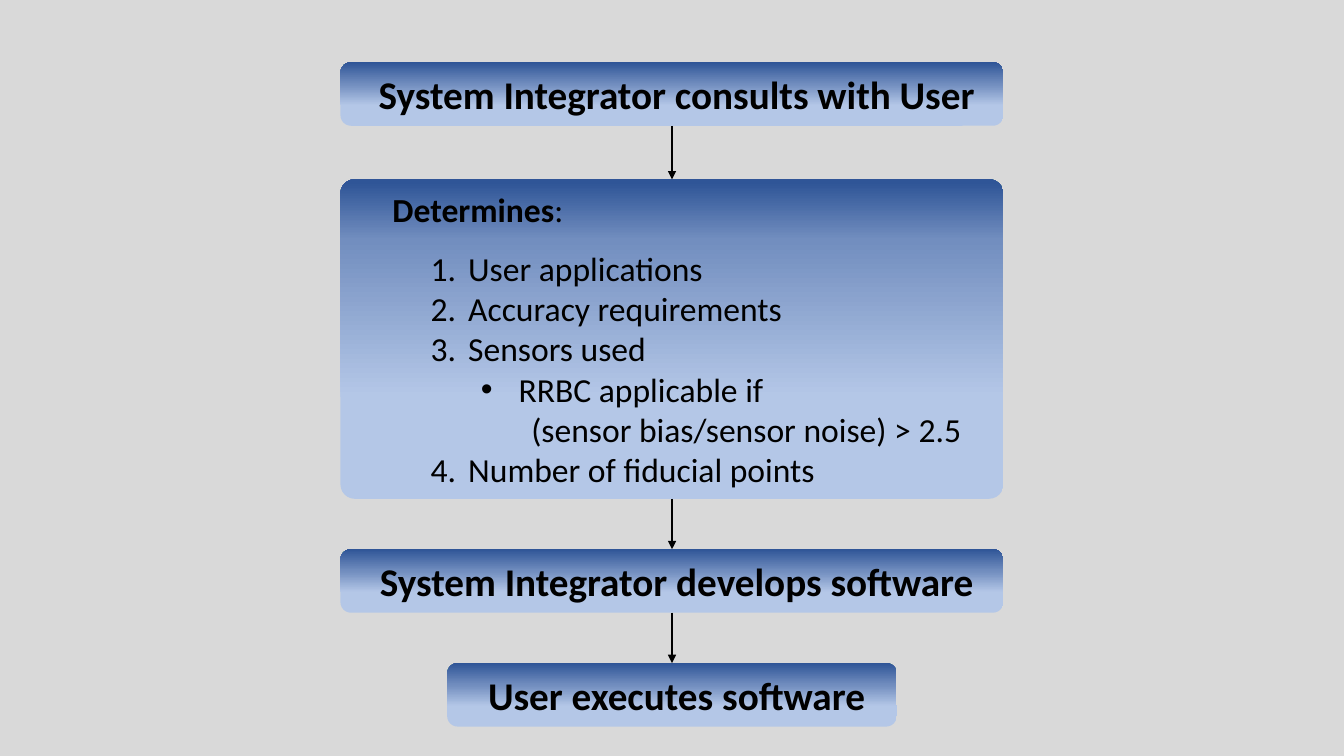
from dataclasses import dataclass

from pptx import Presentation
from pptx.dml.color import RGBColor
from pptx.enum.shapes import MSO_CONNECTOR, MSO_SHAPE
from pptx.enum.text import MSO_ANCHOR, MSO_AUTO_SIZE, PP_ALIGN
from pptx.oxml import parse_xml
from pptx.oxml.ns import nsdecls
from pptx.util import Cm, Pt


@dataclass(frozen=True)
class Theme:
    font: str = "Calibri"
    text: str = "000000"
    background: str = "D9D9D9"
    light: str = "B4C7E7"
    medium: str = "728EBF"
    dark: str = "2F5597"
    step_size: int = 28
    list_size: int = 24


@dataclass(frozen=True)
class Box:
    top: float
    width: float
    height: float
    medium_stop: int = 65
    dark_stop: int = 100
    text: str = ""


@dataclass(frozen=True)
class Item:
    text: str
    indent: float
    hanging: float = 0
    level: int = 0
    bullet: str = "<a:buNone {ns}/>"
    before: float = 0


THEME = Theme()
NUMBER = '<a:buAutoNum {ns} type="arabicPeriod"/>'
DOT = '<a:buChar {ns} char="•"/>'

CONSULT = Box(1.57, 16.71, 1.6, text="System Integrator consults with User")
DETERMINE = Box(4.52, 16.71, 8.05, 81, 99)
DEVELOP = Box(13.84, 16.71, 1.6, text="System Integrator develops software")
EXECUTE = Box(16.71, 11.33, 1.6, text="User executes software")

ITEMS = [
    Item("Determines:", 0.95),
    Item("User applications", 2.86, -0.95, 0, NUMBER, 13.4),
    Item("Accuracy requirements", 2.86, -0.95, 0, NUMBER),
    Item("Sensors used", 2.86, -0.95, 0, NUMBER),
    Item("RRBC applicable if", 4.13, -0.95, 1, DOT),
    Item("(sensor bias/sensor noise) > 2.5", 4.45, level=2),
    Item("Number of fiducial points", 2.86, -0.95, 0, NUMBER),
]


def format_run(r, size: int, bold: bool) -> None:
    r.font.name = THEME.font
    r.font.size = Pt(size)
    r.font.bold = bold
    r.font.color.rgb = RGBColor.from_string(THEME.text)


def paint(sp, box: Box) -> None:
    """Fill a box with the blue gradient, light at the bottom."""
    sp.fill.gradient()
    sp.fill.gradient_angle = 90
    stops = sp.element.xpath("./p:spPr/a:gradFill/a:gsLst")[0]
    for stop in list(stops):
        stops.remove(stop)
    for pos, color in ((0, THEME.light), (32, THEME.light),
                       (box.medium_stop, THEME.medium), (box.dark_stop, THEME.dark)):
        stops.append(parse_xml(f'<a:gs {nsdecls("a")} pos="{pos * 1000}">'
                               f'<a:srgbClr val="{color}"/></a:gs>'))
    sp.line.fill.background()
    sp.shadow.inherit = False


def frame(prs, box: Box) -> tuple[int, int, int, int]:
    """Place a box on the vertical centre line of the slide."""
    width = Cm(box.width)
    return (prs.slide_width - width) // 2, Cm(box.top), width, Cm(box.height)


def add_step(prs, s, box: Box):
    sp = s.shapes.add_shape(MSO_SHAPE.ROUNDED_RECTANGLE, *frame(prs, box))
    paint(sp, box)
    tf = sp.text_frame
    tf.word_wrap = True
    tf.vertical_anchor = MSO_ANCHOR.MIDDLE
    tf.margin_left = Cm(0.48)
    tf.text = box.text
    p = tf.paragraphs[0]
    p.alignment = PP_ALIGN.CENTER
    format_run(p.runs[0], THEME.step_size, True)
    return sp


def fill_list(prs, sp, box: Box, items: list[Item]) -> None:
    sp.left, sp.top, sp.width, sp.height = frame(prs, box)
    sp.element.spPr.insert(1, parse_xml(
        f'<a:prstGeom {nsdecls("a")} prst="roundRect"><a:avLst>'
        '<a:gd name="adj" fmla="val 4500"/></a:avLst></a:prstGeom>'))
    paint(sp, box)
    tf = sp.text_frame
    tf.word_wrap = True
    tf.auto_size = MSO_AUTO_SIZE.NONE
    tf.vertical_anchor = MSO_ANCHOR.TOP
    tf.text = "\n".join(item.text for item in items)
    for p, item in zip(tf.paragraphs, items):
        p.level = item.level
        p.alignment = PP_ALIGN.LEFT
        p.line_spacing = 1.0
        p.space_before = Pt(item.before)
        p.space_after = Pt(0)
        pPr = p._p.get_or_add_pPr()
        pPr.set("marL", str(Cm(item.indent)))
        pPr.set("indent", str(Cm(item.hanging)))
        pPr.append(parse_xml(item.bullet.format(ns=nsdecls("a"))))
        format_run(p.runs[0], THEME.list_size, False)

    # Bold heading with a regular colon
    p = tf.paragraphs[0]
    p.runs[0].text = p.runs[0].text.rstrip(":")
    p.runs[0].font.bold = True
    r = p.add_run()
    r.text = ":"
    format_run(r, THEME.list_size, False)


def add_arrow(s, upper, lower, width: float) -> None:
    line = s.shapes.add_connector(MSO_CONNECTOR.STRAIGHT, 0, 0, 0, 0)
    line.begin_connect(upper, 2)
    line.end_connect(lower, 0)
    line.line.color.rgb = RGBColor.from_string(THEME.text)
    line.line.width = Pt(width)
    line.line._get_or_add_ln().append(
        parse_xml(f'<a:tailEnd {nsdecls("a")} type="triangle"/>'))
    line.element.spPr.append(parse_xml(f'<a:effectLst {nsdecls("a")}/>'))


def main() -> None:
    prs = Presentation()
    prs.slide_width, prs.slide_height = Cm(33.87), Cm(19.05)
    s = prs.slides.add_slide(prs.slide_layouts[1])
    s.background.fill.solid()
    s.background.fill.fore_color.rgb = RGBColor.from_string(THEME.background)

    # The flow has no heading, so only the body placeholder stays
    title = s.shapes.title.element
    title.getparent().remove(title)

    # Boxes
    determine = s.placeholders[1]
    fill_list(prs, determine, DETERMINE, ITEMS)
    consult, develop, execute = (add_step(prs, s, box)
                                 for box in (CONSULT, DEVELOP, EXECUTE))

    # Arrows
    add_arrow(s, consult, determine, 1.75)
    add_arrow(s, determine, develop, 2)
    add_arrow(s, develop, execute, 2)

    prs.save("out.pptx")


if __name__ == "__main__":
    main()
